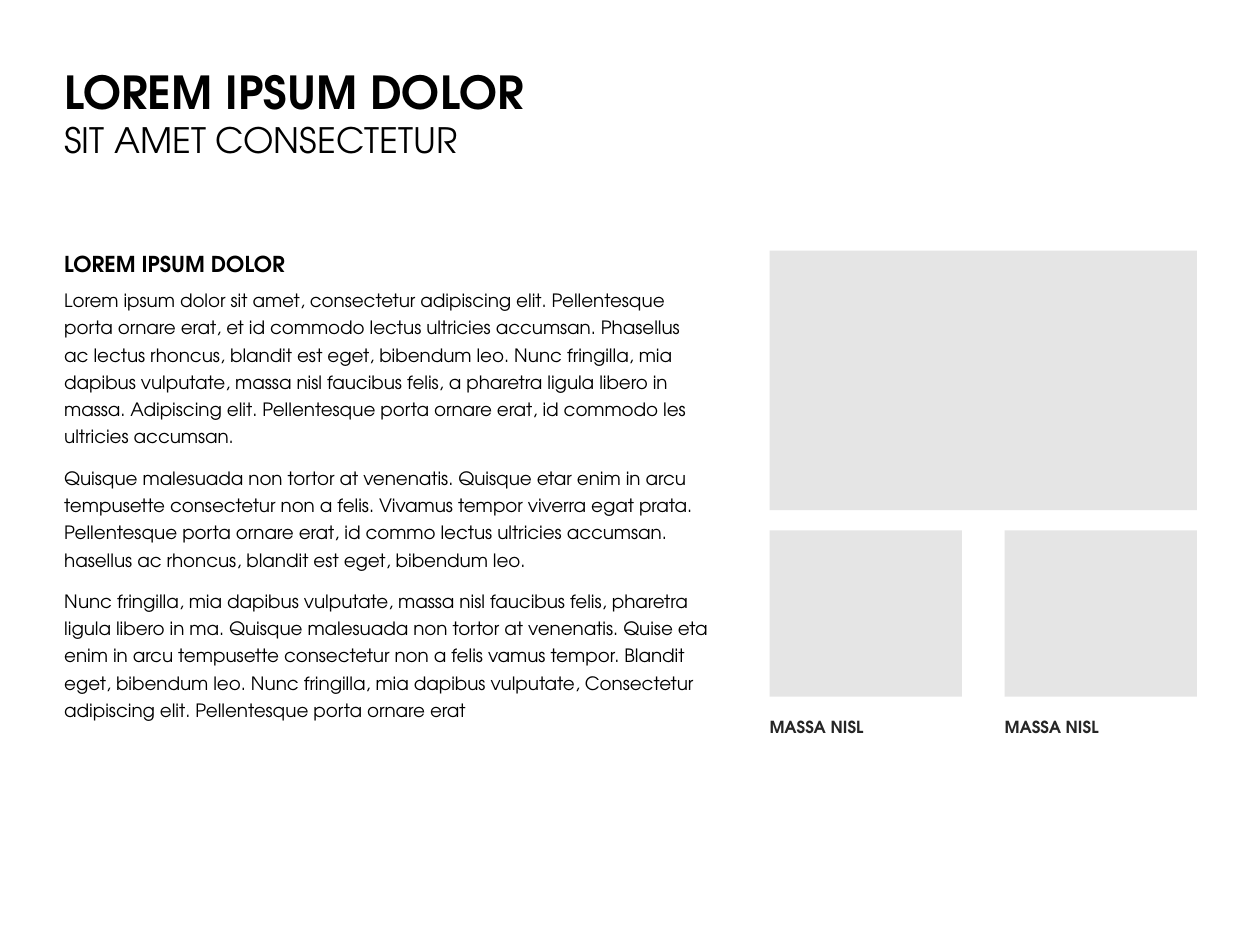
from pptx import Presentation
from pptx.dml.color import RGBColor
from pptx.enum.shapes import MSO_SHAPE as Shape
from pptx.enum.text import MSO_ANCHOR as Anchor
from pptx.util import Inches, Pt

# Content
TITLE = ("LOREM IPSUM DOLOR", "SIT AMET CONSECTETUR")
HEADING = "LOREM IPSUM DOLOR"
BODY = [  # (space before, lines)
    (4, ["Lorem ipsum dolor sit amet, consectetur adipiscing elit. Pellentesque",
         "porta ornare erat, et id commodo lectus ultricies accumsan. Phasellus",
         "ac lectus rhoncus, blandit est eget, bibendum leo. Nunc fringilla, mia",
         "dapibus vulputate, massa nisl faucibus felis, a pharetra ligula libero in",
         "massa. Adipiscing elit. Pellentesque porta ornare erat, id commodo les",
         "ultricies accumsan."]),
    (8, ["Quisque malesuada non tortor at venenatis. Quisque etar enim in arcu",
         "tempusette consectetur non a felis. Vivamus tempor viverra egat prata.",
         "Pellentesque porta ornare erat, id commo lectus ultricies accumsan.",
         "hasellus ac rhoncus, blandit est eget, bibendum leo."]),
    (8, ["Nunc fringilla, mia dapibus vulputate, massa nisl faucibus felis, pharetra",
         "ligula libero in ma. Quisque malesuada non tortor at venenatis. Quise eta",
         "enim in arcu tempusette consectetur non a felis vamus tempor. Blandit",
         "eget, bibendum leo. Nunc fringilla, mia dapibus vulputate, Consectetur",
         "adipiscing elit. Pellentesque porta ornare erat"]),
]
CAPTIONS = [(3, "MASSA NISL"), (4, "MASSA NISL")]  # (column, text)

# Grid areas: column, row, columns spanned, rows spanned
TITLE_AREA = (0, 0, 4, 2)
BODY_AREA = (0, 2, 3, 5)
PANELS = [(3, 2, 2, 3), (3, 5, 1, 2), (4, 5, 1, 2)]
CAPTION_ROW, CAPTION_SIZE = 7, (1.24, 0.16)

COLORS = {"text": "000000", "caption": "262626", "panel": "E5E5E5"}
FONT = "TeX Gyre Adventor"
WIDTH, HEIGHT = 10, 7.5
LEFT, RIGHT, TOP = 0.51, 9.5, 0.51
COLUMNS, COLUMN_GAP = 5, 0.34
ROW_STEP, ROW_GAP = 0.74, 0.16
COLUMN_STEP = (RIGHT - LEFT + COLUMN_GAP) / COLUMNS


def area(column, row, across=1, down=1):
    return (LEFT + column * COLUMN_STEP, TOP + row * ROW_STEP,
            across * COLUMN_STEP - COLUMN_GAP, down * ROW_STEP - ROW_GAP)


def add_text_frame(page, place):
    frame = page.shapes.add_textbox(*map(Inches, place)).text_frame
    frame.word_wrap = True
    frame.vertical_anchor = Anchor.TOP
    frame.margin_left = frame.margin_right = 0
    frame.margin_top = frame.margin_bottom = 0
    return frame


def add_span(para, text, size, bold=False, color="text"):
    span = para.add_run()
    span.text = text
    span.font.name = FONT
    span.font.size = Pt(size)
    span.font.bold = bold
    span.font.color.rgb = RGBColor.from_string(COLORS[color])


deck = Presentation()
deck.slide_width, deck.slide_height = Inches(WIDTH), Inches(HEIGHT)
page = deck.slides.add_slide(deck.slide_layouts[6])

# Grey panels
for panel in PANELS:
    box = page.shapes.add_shape(Shape.RECTANGLE, *map(Inches, area(*panel)))
    box.shadow.inherit = False
    box.fill.solid()
    box.fill.fore_color.rgb = RGBColor.from_string(COLORS["panel"])
    box.line.fill.background()

# Heading and body lines
frame = add_text_frame(page, area(*BODY_AREA))
para = frame.paragraphs[0]
para.space_after = Pt(3)
add_span(para, HEADING, 12.5, bold=True)
for space_before, lines in BODY:
    for index, line in enumerate(lines):
        para = frame.add_paragraph()
        para.space_before = Pt(0 if index else space_before)
        para.space_after = Pt(3)
        add_span(para, line, 10.5)

# Title
para = add_text_frame(page, area(*TITLE_AREA)).paragraphs[0]
add_span(para, TITLE[0], 26, bold=True)
para.add_line_break()
add_span(para, TITLE[1], 20)

# Captions
for column, caption in CAPTIONS:
    place = area(column, CAPTION_ROW)[:2] + CAPTION_SIZE
    para = add_text_frame(page, place).paragraphs[0]
    add_span(para, caption, 9.5, bold=True, color="caption")

deck.save("out.pptx")
